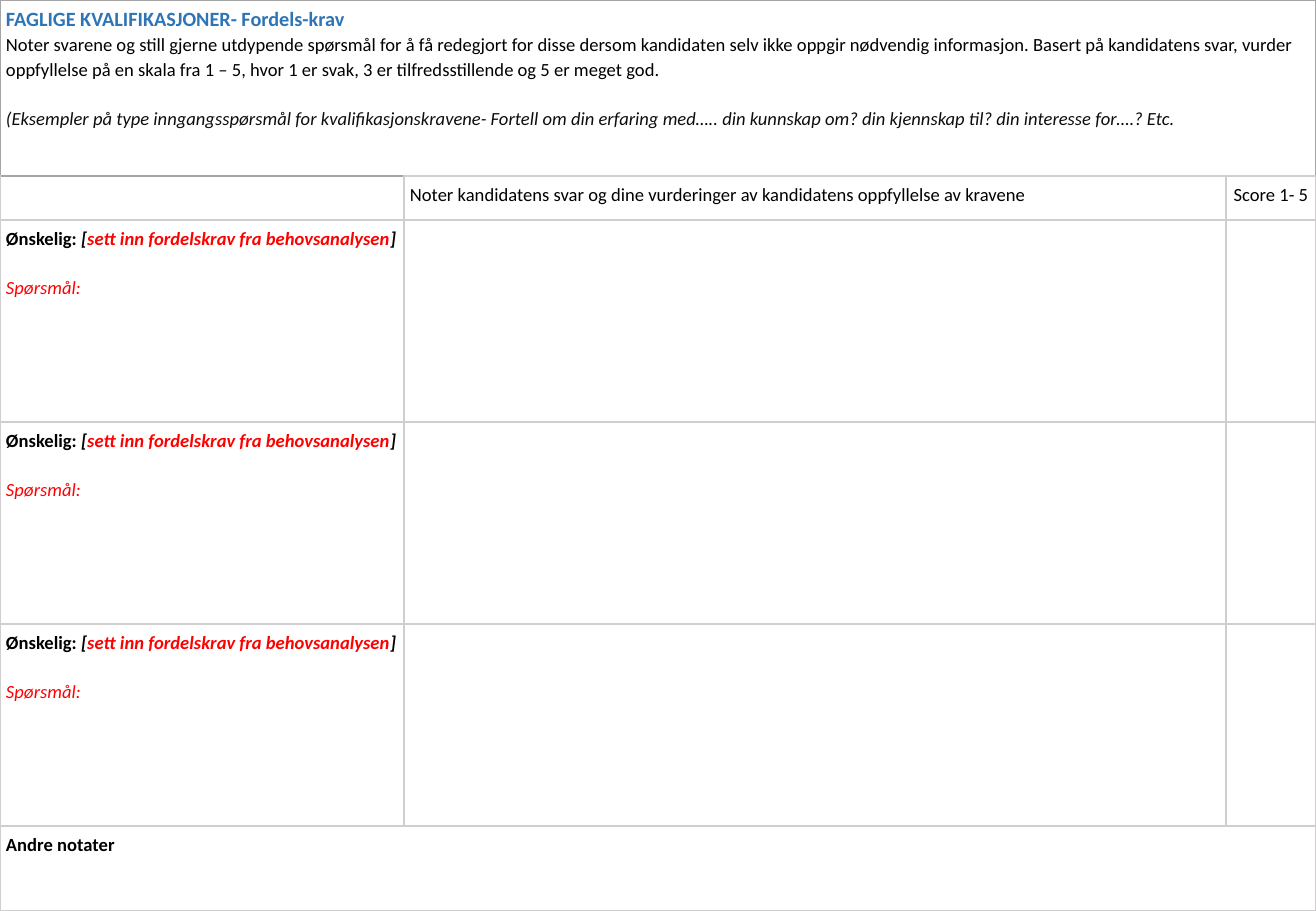
from lxml.etree import SubElement
from pptx import Presentation
from pptx.dml.color import RGBColor
from pptx.enum.text import PP_ALIGN
from pptx.oxml import parse_xml
from pptx.oxml.ns import nsdecls, qn
from pptx.util import Pt

EMU_PER_PX = 7526
COLORS = {
    "title": "2E75B6", "black": "000000", "example": "0D0D0D", "red": "FF0000",
    "grid": "D0CECE", "frame": "A5A5A5",
}
FONT, BODY_SIZE, TITLE_SIZE = "Calibri", 11, 12
LINE_SPACING, BLOCK_GAP = 1.07, 14.5
MARGIN = 6

COLUMNS = [404, 822, 90]
ROWS = [176, 44, 202, 202, 202, 85]

# Each run is (text, colour, style); style letters are b for bold, i for italic.
# Each cell holds paragraphs of (runs, size, space before).
INTRO = [
    ([("FAGLIGE KVALIFIKASJONER- Fordels-krav", "title", "b")], TITLE_SIZE, 0),
    ([("Noter svarene og still gjerne utdypende spørsmål for å få redegjort for disse "
       "dersom kandidaten selv ikke oppgir nødvendig informasjon. Basert på kandidatens "
       "svar, vurder oppfyllelse på en skala fra 1 – 5, hvor 1 er svak, 3 er "
       "tilfredsstillende og 5 er meget god.", "black", "")], BODY_SIZE, 0),
    ([("(Eksempler på type inngangsspørsmål for kvalifikasjonskravene- Fortell om din "
       "erfaring med….. din kunnskap om? din kjennskap til? din interesse for….? Etc.",
       "example", "i")], BODY_SIZE, BLOCK_GAP),
]
ANSWER_HEADING = [
    ([("Noter kandidatens svar og dine vurderinger av kandidatens oppfyllelse av kravene",
       "black", "")], BODY_SIZE, 0),
]
SCORE_HEADING = [([("Score 1- 5", "black", "")], BODY_SIZE, 0)]
REQUIREMENT = [
    ([("Ønskelig: ", "black", "b"), ("[", "black", "bi"),
      ("sett inn fordelskrav fra behovsanalysen", "red", "bi"),
      ("]", "black", "bi")], BODY_SIZE, 0),
    ([("Spørsmål:", "red", "i")], BODY_SIZE, BLOCK_GAP),
]
NOTES = [([("Andre notater", "black", "b")], BODY_SIZE, 0)]

CELLS = [
    [INTRO, [], []],
    [[], ANSWER_HEADING, SCORE_HEADING],
    *[[REQUIREMENT, [], []] for _ in range(3)],
    [NOTES, [], []],
]
MERGED_ROWS = [0, 5]


def px(length):
    return length * EMU_PER_PX


def write_cell(cell, paragraphs):
    frame = cell.text_frame
    if not paragraphs:
        # An empty cell takes its line height from the end-of-paragraph size.
        end = SubElement(frame.paragraphs[0]._p, qn("a:endParaRPr"))
        end.set("sz", str(BODY_SIZE * 100))
    for index, (runs, size, space_before) in enumerate(paragraphs):
        paragraph = frame.add_paragraph() if index else frame.paragraphs[0]
        paragraph.line_spacing = LINE_SPACING
        paragraph.space_before = Pt(space_before)
        paragraph.font.name = FONT
        paragraph.font.size = Pt(size)
        for text, color, style in runs:
            run = paragraph.add_run()
            run.text = text
            run.font.color.rgb = RGBColor.from_string(COLORS[color])
            run.font.bold = "b" in style
            run.font.italic = "i" in style


def set_borders(cell, colors):
    """Draw 1 pt borders; colors follow left, right, top, bottom."""
    properties = cell._tc.get_or_add_tcPr()
    for position, (side, color) in enumerate(zip("LRTB", colors)):
        properties.insert(position, parse_xml(
            f'<a:ln{side} {nsdecls("a")} w="{Pt(1)}"><a:solidFill>'
            f'<a:srgbClr val="{COLORS[color]}"/></a:solidFill></a:ln{side}>'))


def border_colors(row, column):
    if row == 0:
        return ["frame"] * 4
    top = "frame" if (row, column) == (1, 0) else "grid"
    return ["grid", "grid", top, "grid"]


def main():
    presentation = Presentation()
    width, height = px(sum(COLUMNS)), px(sum(ROWS))
    presentation.slide_width, presentation.slide_height = width, height
    slide = presentation.slides.add_slide(presentation.slide_layouts[6])

    form = slide.shapes.add_table(len(ROWS), len(COLUMNS), 0, 0, width, height).table
    form.first_row = form.horz_banding = False
    for column, column_width in zip(form.columns, COLUMNS):
        column.width = px(column_width)
    for row, row_height in zip(form.rows, ROWS):
        row.height = px(row_height)

    for row, contents in enumerate(CELLS):
        for column, paragraphs in enumerate(contents):
            cell = form.cell(row, column)
            cell.margin_left = cell.margin_right = px(MARGIN)
            cell.margin_top = cell.margin_bottom = px(MARGIN)
            cell.fill.background()
            set_borders(cell, border_colors(row, column))
            write_cell(cell, paragraphs)
    form.cell(1, 2).text_frame.paragraphs[0].alignment = PP_ALIGN.CENTER

    for row in MERGED_ROWS:
        form.cell(row, 0).merge(form.cell(row, len(COLUMNS) - 1))

    presentation.save("out.pptx")


if __name__ == "__main__":
    main()
